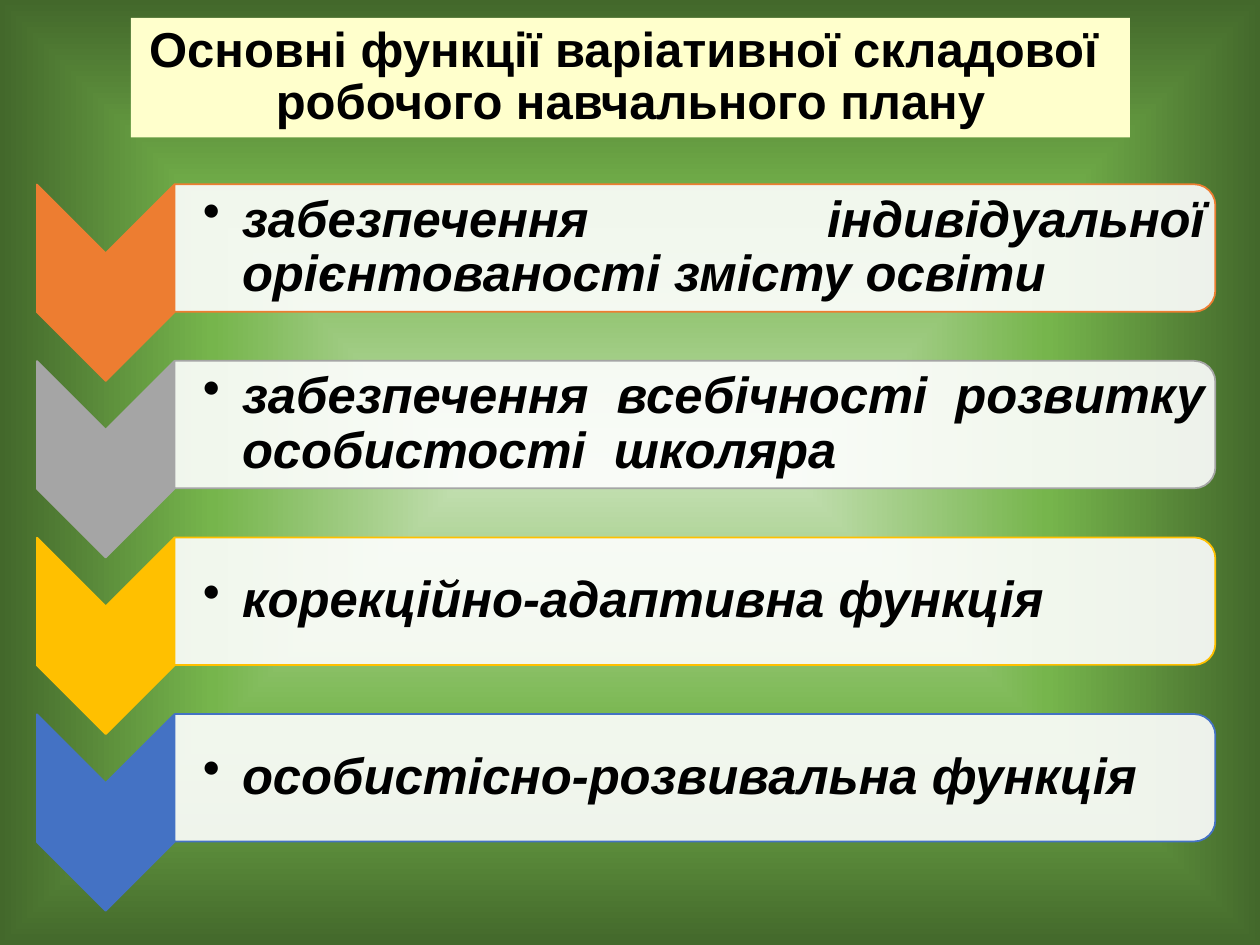
import pptx
import pptx.dml.color
import pptx.enum.shapes
import pptx.enum.text
import pptx.oxml
import pptx.oxml.ns
import pptx.util
from lxml import etree

Cm, Pt = pptx.util.Cm, pptx.util.Pt
MSO = pptx.enum.shapes.MSO_SHAPE
ALIGN = pptx.enum.text.PP_ALIGN
MIDDLE = pptx.enum.text.MSO_ANCHOR.MIDDLE
qn = pptx.oxml.ns.qn

TITLE = "Основні функції варіативної складової \vробочого навчального плану"
FUNCTIONS = [
    ("забезпечення індивідуальної орієнтованості змісту освіти", "ED7D31"),
    ("забезпечення всебічності розвитку особистості  школяра", "A5A5A5"),
    ("корекційно-адаптивна функція", "FFC000"),
    ("особистісно-розвивальна функція", "4472C4"),
]
BACKGROUND = [(0, "C5E0B4"), (55, "76B54C"), (100, "43682B")]

# Lengths in cm
PITCH = 3.56
CHEVRON_X, CHEVRON_Y, CHEVRON_SIZE = 2.13, 5.7, (3.96, 2.77)
BAR_X, BAR_Y, BAR_SIZE = 14.01, 5.0, (2.57, 20.98)
TEXT_X, TEXT_SIZE = 3.51, (20.85, 2.34)
INDENT = 0.79


def rgb(value):
    return pptx.dml.color.RGBColor.from_string(value)


def set_background(s):
    stops = "".join(f'<a:gs pos="{pos * 1000}"><a:srgbClr val="{color}"/></a:gs>'
                    for pos, color in BACKGROUND)
    s.element.cSld.insert(0, pptx.oxml.parse_xml(
        f'<p:bg {pptx.oxml.ns.nsdecls("p", "a")}><p:bgPr><a:gradFill rotWithShape="1">'
        f'<a:gsLst>{stops}</a:gsLst><a:path path="shape">'
        '<a:fillToRect l="50000" t="50000" r="50000" b="50000"/></a:path>'
        '</a:gradFill><a:effectLst/></p:bgPr></p:bg>'))


def add_turned(s, kind, x, y, size, fill, line):
    """Add a shape centred on x, y and turned a quarter clockwise."""
    w, h = size
    sp = s.shapes.add_shape(kind, Cm(x - w / 2), Cm(y - h / 2), Cm(w), Cm(h))
    sp.rotation = 90
    sp.shadow.inherit = False
    sp.fill.solid()
    sp.fill.fore_color.rgb = rgb(fill)
    sp.line.color.rgb = rgb(line)
    sp.line.width = Pt(1)
    return sp


def add_text(s, box, text, size, align, italic=False):
    sp = s.shapes.add_textbox(*map(Cm, box))
    tf = sp.text_frame
    tf.word_wrap = True
    tf.vertical_anchor = MIDDLE
    tf.text = text
    p = tf.paragraphs[0]
    p.alignment = align
    p.line_spacing = 0.9
    p.font.name = "Arial"
    p.font.size = Pt(size)
    p.font.bold = True
    p.font.italic = italic
    p.font.color.rgb = rgb("000000")
    return sp


def add_bullet(p):
    ppr = p._p.get_or_add_pPr()
    ppr.set("marL", str(Cm(INDENT)))
    ppr.set("indent", str(-Cm(INDENT)))
    bullet = etree.Element(qn("a:buChar"), char="•")
    ppr.find(qn("a:lnSpc")).addnext(bullet)


prs = pptx.Presentation()
prs.slide_width, prs.slide_height = Cm(25.4), Cm(19.05)
s = prs.slides.add_slide(prs.slide_layouts[6])
set_background(s)

title = add_text(s, (2.64, 0.36, 20.14, 2.41), TITLE, 28, ALIGN.CENTER)
title.text_frame.word_wrap = False
title.fill.solid()
title.fill.fore_color.rgb = rgb("FFFFCC")

for i, (text, color) in enumerate(FUNCTIONS):
    bar_y = BAR_Y + i * PITCH
    add_turned(s, MSO.CHEVRON, CHEVRON_X, CHEVRON_Y + i * PITCH, CHEVRON_SIZE, color, color)
    bar = add_turned(s, MSO.ROUND_2_SAME_RECTANGLE, BAR_X, bar_y, BAR_SIZE, "FFFFFF", color)
    white = bar.element.spPr.find(qn("a:solidFill"))[0]
    etree.SubElement(white, qn("a:alpha"), val="90000")

    w, h = TEXT_SIZE
    label = add_text(s, (TEXT_X, bar_y - h / 2, w, h), text, 29, ALIGN.JUSTIFY, italic=True)
    tf = label.text_frame
    tf.margin_left = Cm(0.58)
    tf.margin_top = tf.margin_right = tf.margin_bottom = Cm(0.05)
    add_bullet(tf.paragraphs[0])

prs.save("out.pptx")
